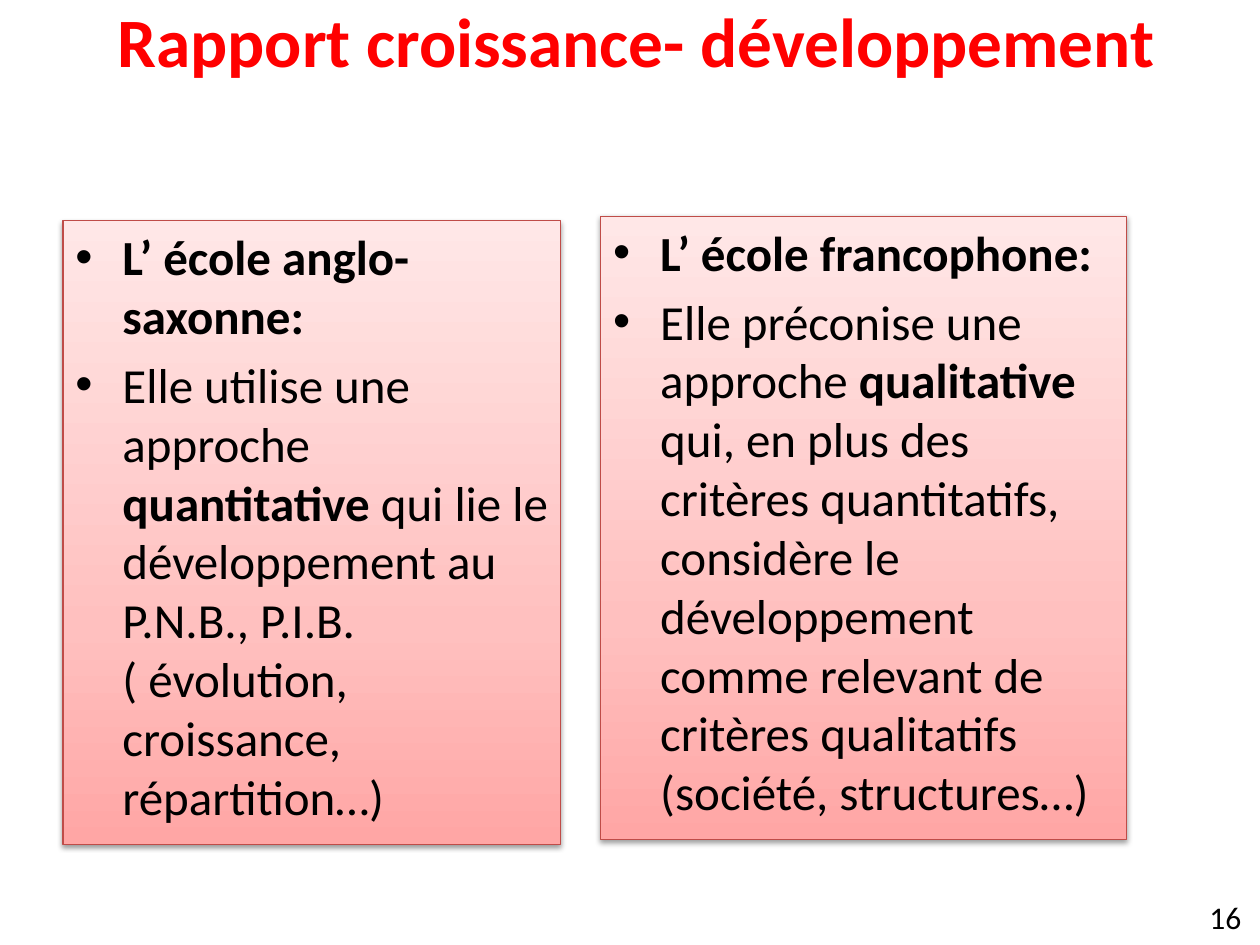
"""Build a slide comparing two schools of thought on growth and development."""
from dataclasses import dataclass

import pptx
import pptx.dml.color
import pptx.enum.shapes
import pptx.enum.text
import pptx.oxml.ns
import pptx.util
from lxml import etree

Cm, Pt = pptx.util.Cm, pptx.util.Pt
qn = pptx.oxml.ns.qn
FONT = "Calibri"
BLACK, RED, BORDER = "000000", "FF0000", "BF4C48"
GRADIENT = ((0, "FFA6A5"), (35, "FFC0BF"), (100, "FFE7E7"))
PANEL_HEIGHT = 12.57


@dataclass(frozen=True)
class Span:
    text: str
    bold: bool = False


@dataclass(frozen=True)
class Panel:
    left: float
    top: float
    width: float
    paragraphs: tuple[tuple[Span, ...], ...]


PANELS = (
    Panel(1.27, 4.45, 10.03, (
        (Span("L’ école anglo-saxonne:", True),),
        (Span("Elle utilise une approche "),
         Span("quantitative", True),
         Span(" qui lie le développement au P.N.B., P.I.B. "
              "( évolution, croissance, répartition…)")),
    )),
    Panel(12.11, 4.36, 10.6, (
        (Span("L’ école francophone:", True),),
        (Span("Elle préconise une approche "),
         Span("qualitative ", True),
         Span("qui, en plus des critères quantitatifs, considère le développement "
              "comme relevant de critères qualitatifs (société, structures…)")),
    )),
)


def color(value: str) -> pptx.dml.color.RGBColor:
    return pptx.dml.color.RGBColor.from_string(value)


def add_span(para, span: Span, size: float, tint: str = BLACK) -> None:
    run = para.add_run()
    run.text = span.text
    run.font.name = FONT
    run.font.size = Pt(size)
    run.font.bold = span.bold
    run.font.color.rgb = color(tint)


def add_child(parent, tag: str, **attributes):
    return etree.SubElement(parent, qn(tag), attributes)


def fill_gradient(properties) -> None:
    gradient = add_child(properties, "a:gradFill", rotWithShape="1")
    stops = add_child(gradient, "a:gsLst")
    for position, tint in GRADIENT:
        stop = add_child(stops, "a:gs", pos=str(position * 1000))
        add_child(stop, "a:srgbClr", val=tint)
    add_child(gradient, "a:lin", ang=str(270 * 60000), scaled="1")


def add_shadow(properties) -> None:
    effects = add_child(properties, "a:effectLst")
    shadow = add_child(effects, "a:outerShdw", blurRad=str(Pt(3.1)),
                       dist=str(Pt(1.6)), dir=str(90 * 60000), rotWithShape="0")
    tint = add_child(shadow, "a:srgbClr", val=BLACK)
    add_child(tint, "a:alpha", val="38000")


def set_bullet(para) -> None:
    properties = para._p.get_or_add_pPr()
    properties.set("marL", str(Cm(0.95)))
    properties.set("indent", str(-Cm(0.95)))
    add_child(properties, "a:buFont", typeface="Arial")
    add_child(properties, "a:buChar", char="•")


def add_panel(page, panel: Panel) -> None:
    box = page.shapes.add_shape(
        pptx.enum.shapes.MSO_SHAPE.RECTANGLE,
        Cm(panel.left), Cm(panel.top), Cm(panel.width), Cm(PANEL_HEIGHT))
    properties = box._element.spPr
    fill_gradient(properties)
    box.line.color.rgb = color(BORDER)
    box.line.width = Pt(0.75)
    add_shadow(properties)
    frame = box.text_frame
    frame.word_wrap = True
    frame.vertical_anchor = pptx.enum.text.MSO_ANCHOR.TOP
    for index, spans in enumerate(panel.paragraphs):
        para = frame.add_paragraph() if index else frame.paragraphs[0]
        para.alignment = pptx.enum.text.PP_ALIGN.LEFT
        para.space_before = Pt(5.6)
        set_bullet(para)
        for span in spans:
            add_span(para, span, 28)


def add_title(page) -> None:
    box = page.shapes.add_textbox(Cm(1.4), Cm(-0.79), Cm(22.86), Cm(3.18))
    frame = box.text_frame
    frame.word_wrap = True
    frame.vertical_anchor = pptx.enum.text.MSO_ANCHOR.MIDDLE
    para = frame.paragraphs[0]
    para.alignment = pptx.enum.text.PP_ALIGN.CENTER
    add_span(para, Span("Rapport croissance- développement", True), 39.6, RED)


def add_page_number(page) -> None:
    box = page.shapes.add_textbox(Cm(24.13), Cm(17.98), Cm(1.17), Cm(1.02))
    frame = box.text_frame
    frame.word_wrap = False
    frame.auto_size = pptx.enum.text.MSO_AUTO_SIZE.SHAPE_TO_FIT_TEXT
    add_span(frame.paragraphs[0], Span("16"), 18)


def main() -> None:
    deck = pptx.Presentation()
    deck.slide_width, deck.slide_height = Cm(25.4), Cm(19.05)
    page = deck.slides.add_slide(deck.slide_layouts[6])
    add_title(page)
    for panel in PANELS:
        add_panel(page, panel)
    add_page_number(page)
    deck.save("out.pptx")


if __name__ == "__main__":
    main()
